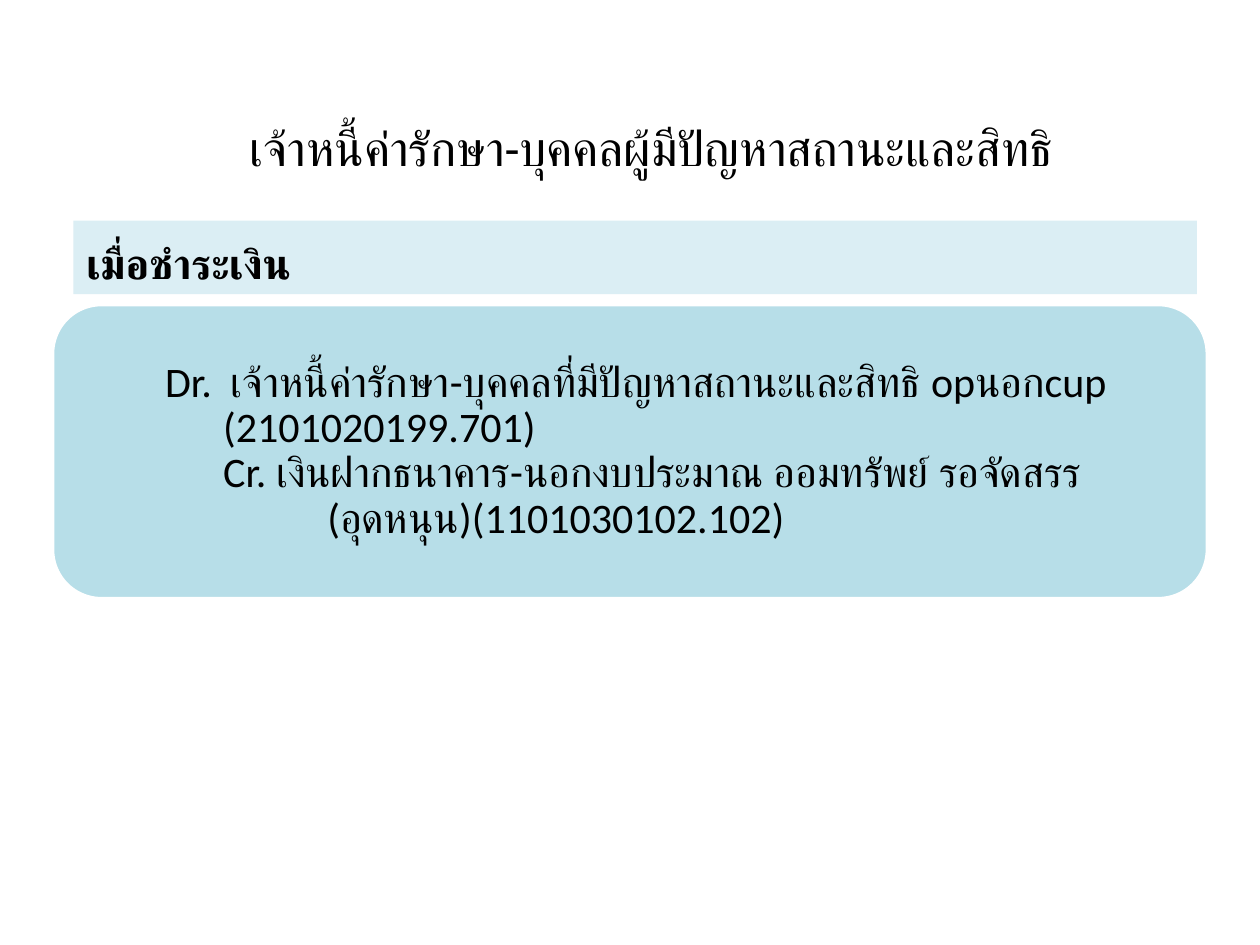
from pptx import Presentation
from pptx.dml.color import RGBColor
from pptx.enum import shapes, text
from pptx.util import Cm, Pt

HUES = {"ink": "000000", "pale": "DBEEF4", "aqua": "B7DEE8", "edge": "FFFFFF"}
FONTS = {
    "title": {"name": "Calibri", "size": Pt(28), "bold": False},
    "head": {"name": "Calibri", "size": Pt(24), "bold": True},
    "entry": {"name": "Calibri", "size": Pt(24), "bold": False},
}
ENTRY = [  # left indent in cm, wording
    (1.73, "Dr.  เจ้าหนี้ค่ารักษา-บุคคลที่มีปัญหาสถานะและสิทธิ opนอกcup"),
    (2.9, "(2101020199.701)"),
    (2.9, "Cr. เงินฝากธนาคาร-นอกงบประมาณ ออมทรัพย์ รอจัดสรร"),
    (5, "(อุดหนุน)(1101030102.102)"),
]


def hue(key):
    return RGBColor.from_string(HUES[key])


def paint(shape, key):
    shape.fill.solid()
    shape.fill.fore_color.rgb = hue(key)


def write(para, words, style):
    run = para.add_run()
    run.text = words
    for key, value in FONTS[style].items():
        setattr(run.font, key, value)
    run.font.color.rgb = hue("ink")


def fill_holder(holder, box, words, style, align, anchor):
    """Move a placeholder to the box and give it one line of text."""
    for key, value in zip(("left", "top", "width", "height"), box):
        setattr(holder, key, Cm(value))
    holder.text_frame.vertical_anchor = anchor
    para = holder.text_frame.paragraphs[0]
    para.alignment = align
    para.space_before = Pt(0)
    write(para, words, style)


def add_entry(slide, box, lines):
    """Rounded panel with the indented lines of a journal entry."""
    panel = slide.shapes.add_shape(
        shapes.MSO_SHAPE.ROUNDED_RECTANGLE, *map(Cm, box))
    panel.shadow.inherit = False
    paint(panel, "aqua")
    panel.line.color.rgb = hue("edge")
    panel.line.width = Pt(2)
    frame = panel.text_frame
    frame.word_wrap = True
    frame.vertical_anchor = text.MSO_ANCHOR.MIDDLE
    for side in ("left", "top", "right", "bottom"):
        setattr(frame, f"margin_{side}", Cm(0.25))
    for i, (indent, words) in enumerate(lines):
        para = frame.add_paragraph() if i else frame.paragraphs[0]
        para.alignment = text.PP_ALIGN.LEFT
        para.line_spacing = 0.9
        para._p.get_or_add_pPr().set("marL", str(Cm(indent)))
        write(para, words, "entry")
    para.space_after = Pt(8)


def main():
    deck = Presentation()
    deck.slide_width, deck.slide_height = Cm(25.4), Cm(19.05)
    slide = deck.slides.add_slide(deck.slide_layouts.get_by_name("Comparison"))
    title, head, *spare = slide.placeholders
    for holder in spare:
        holder.element.getparent().remove(holder.element)

    fill_holder(title, (2.54, 1.69, 21.17, 2.54),
                "เจ้าหนี้ค่ารักษา-บุคคลผู้มีปัญหาสถานะและสิทธิ", "title",
                text.PP_ALIGN.CENTER, text.MSO_ANCHOR.MIDDLE)
    fill_holder(head, (1.48, 4.45, 22.65, 1.48), "เมื่อชำระเงิน", "head",
                text.PP_ALIGN.LEFT, text.MSO_ANCHOR.BOTTOM)
    paint(head, "pale")
    add_entry(slide, (1.06, 6.14, 23.28, 5.93), ENTRY)
    deck.save("out.pptx")


if __name__ == "__main__":
    main()
